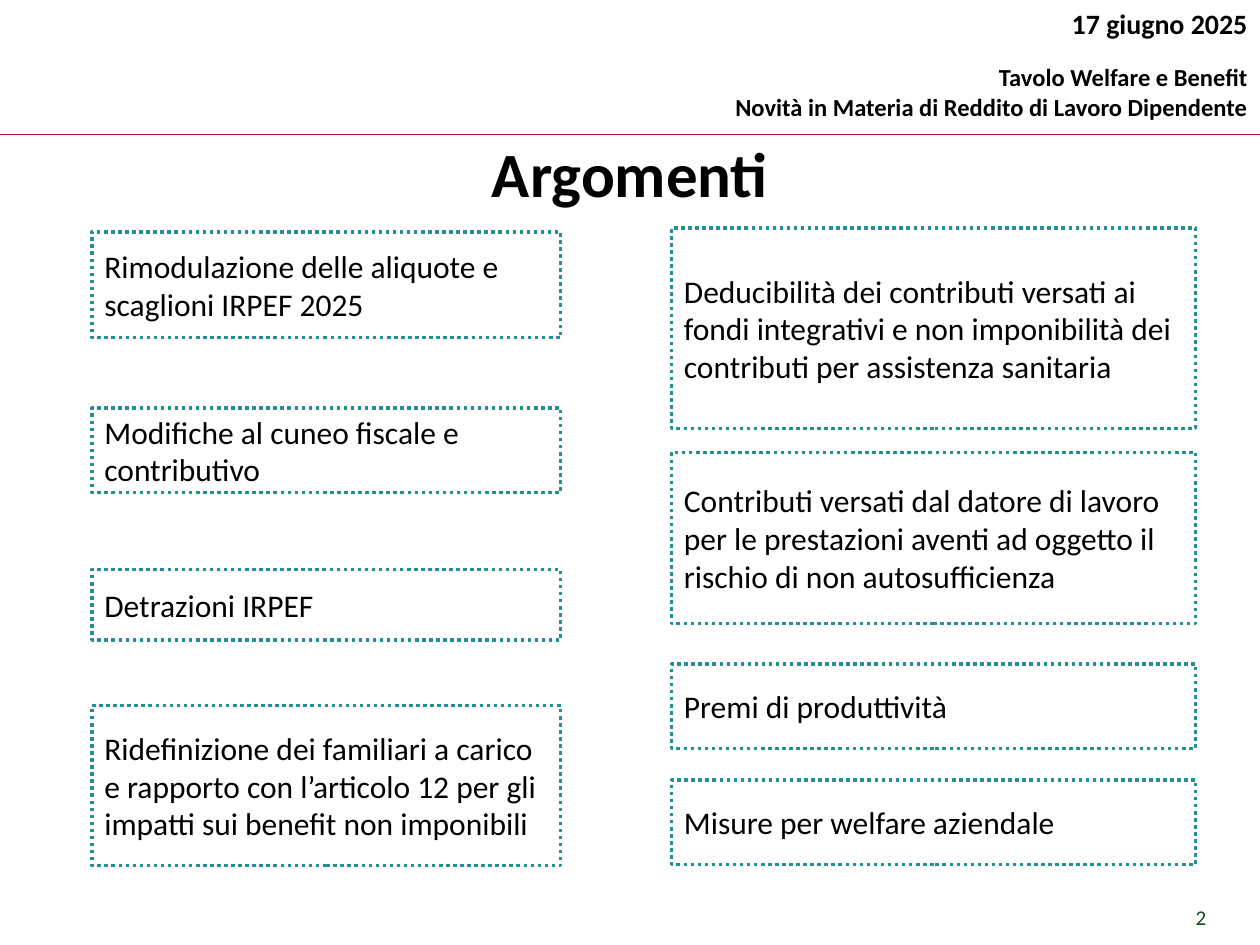
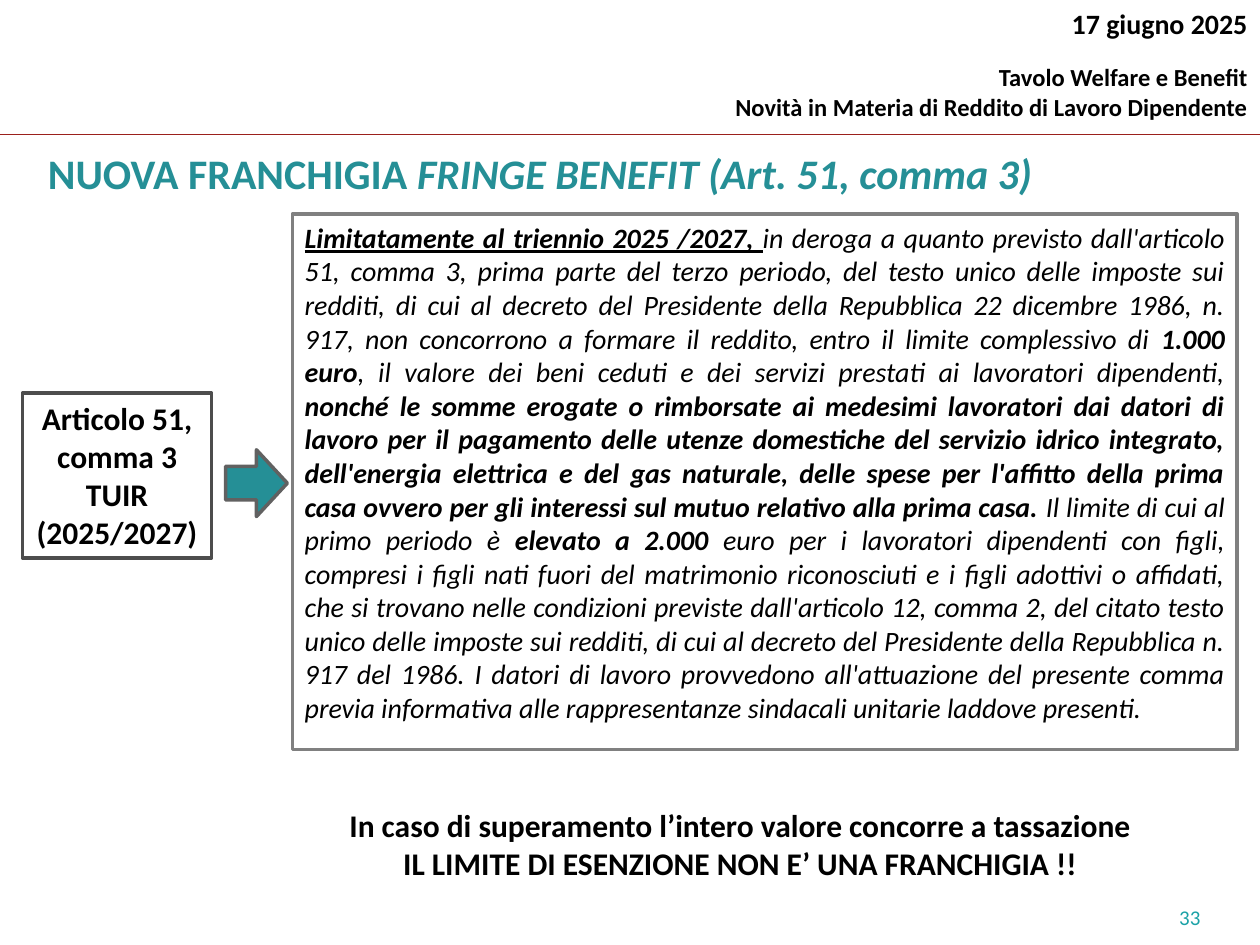
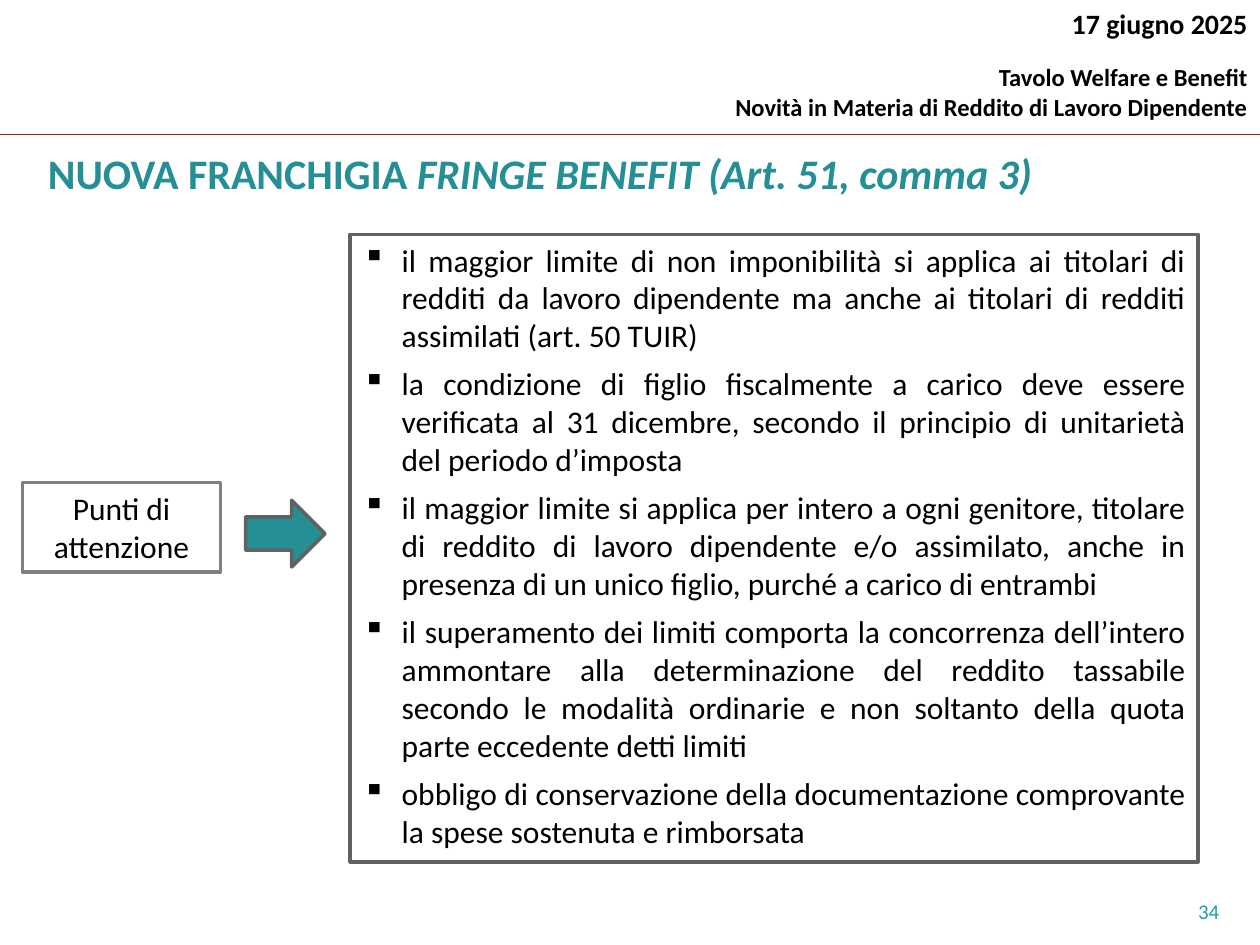
import pptx
import pptx.dml.color
import pptx.enum.dml
import pptx.enum.shapes
import pptx.enum.text
import pptx.oxml.ns
import pptx.util
from lxml import etree

ALIGN = pptx.enum.text.PP_ALIGN
ANCHOR = pptx.enum.text.MSO_ANCHOR
SHAPE = pptx.enum.shapes.MSO_SHAPE

FONT = "Calibri"
BLACK, WHITE = "000000", "FFFFFF"
TEAL, RED, GREEN, NUMBER_TEAL = "258F96", "9B201C", "0F4B0F", "1BA2A7"
DARK_GRAY, MID_GRAY, LIGHT_GRAY = "4D4D4D", "616161", "808080"

WIDTH, HEIGHT = pptx.util.Inches(10), pptx.util.Inches(7.5)
COLUMN, ROW = WIDTH / 100, HEIGHT / 75
INDENT = pptx.util.Inches(0.31)

TOPIC_COLUMNS = [
    (7.3, 37.2, [
        (18.4, 8.4, "Rimodulazione delle aliquote e scaglioni IRPEF 2025"),
        (32.4, 6.7, "Modifiche al cuneo fiscale e contributivo"),
        (45.2, 5.6, "Detrazioni IRPEF"),
        (56, 12.7, "Ridefinizione dei familiari a carico e rapporto con l’articolo 12 "
                   "per gli impatti sui benefit non imponibili"),
    ]),
    (53.3, 41.6, [
        (18.1, 15.9, "Deducibilità dei contributi versati ai fondi integrativi e non "
                     "imponibilità dei contributi per assistenza sanitaria"),
        (35.9, 13.6, "Contributi versati dal datore di lavoro per le prestazioni aventi "
                     "ad oggetto il rischio di non autosufficienza"),
        (52.7, 6.7, "Premi di produttività"),
        (61.9, 6.7, "Misure per welfare aziendale"),
    ]),
]

FRINGE_TITLE = [("NUOVA FRANCHIGIA ", "b"), ("FRINGE BENEFIT (Art. 51, comma 3)", "bi")]

LAW_TEXT = [
    ("Limitatamente al triennio 2025 /2027, ", "biu"),
    ("in deroga a quanto previsto dall'articolo 51, comma 3, prima parte del terzo periodo, "
     "del testo unico delle imposte sui redditi, di cui al decreto del Presidente della "
     "Repubblica 22 dicembre 1986, n. 917, non concorrono a formare il reddito, entro il "
     "limite complessivo di ", "i"),
    ("1.000 euro", "bi"),
    (", il valore dei beni ceduti e dei servizi prestati ai lavoratori dipendenti, ", "i"),
    ("nonché le somme erogate o rimborsate ai medesimi lavoratori dai datori di lavoro per "
     "il pagamento delle utenze domestiche del servizio idrico integrato, dell'energia "
     "elettrica e del gas naturale, delle spese per l'affitto della prima casa ovvero per "
     "gli interessi sul mutuo relativo alla prima casa. ", "bi"),
    ("Il limite di cui al primo periodo è ", "i"),
    ("elevato a 2.000 ", "bi"),
    ("euro per i lavoratori dipendenti con figli, compresi i figli nati fuori del matrimonio "
     "riconosciuti e i figli adottivi o affidati, che si trovano nelle condizioni previste "
     "dall'articolo 12, comma 2, del citato testo unico delle imposte sui redditi, di cui al "
     "decreto del Presidente della Repubblica n. 917 del 1986. I datori di lavoro provvedono "
     "all'attuazione del presente comma previa informativa alle rappresentanze sindacali "
     "unitarie laddove presenti.", "i"),
]

ATTENTION_POINTS = [
    "il maggior limite di non imponibilità si applica ai titolari di redditi da lavoro "
    "dipendente ma anche ai titolari di redditi assimilati (art. 50 TUIR)",
    "la condizione di figlio fiscalmente a carico deve essere verificata al 31 dicembre, "
    "secondo il principio di unitarietà del periodo d’imposta",
    "il maggior limite si applica per intero a ogni genitore, titolare di reddito di lavoro "
    "dipendente e/o assimilato, anche in presenza di un unico figlio, purché a carico di entrambi",
    "il superamento dei limiti comporta la concorrenza dell’intero ammontare alla determinazione "
    "del reddito tassabile secondo le modalità ordinarie e non soltanto della quota parte "
    "eccedente detti limiti",
    "obbligo di conservazione della documentazione comprovante la spese sostenuta e rimborsata",
]


def color(value):
    return pptx.dml.color.RGBColor.from_string(value)


def cells(left, top, width, height):
    return [round(length) for length in (left * COLUMN, top * ROW, width * COLUMN, height * ROW)]


def add_bullet(paragraph):
    properties = paragraph._p.get_or_add_pPr()
    properties.set("marL", str(INDENT))
    properties.set("indent", str(-INDENT))
    bullet = etree.SubElement(properties, pptx.oxml.ns.qn("a:buChar"))
    bullet.set("char", "▪")


def write(shape, paragraphs, size, ink=BLACK, bold=False, align=ALIGN.LEFT,
          anchor=ANCHOR.TOP, bullets=False):
    frame = shape.text_frame
    frame.word_wrap = True
    frame.auto_size = pptx.enum.text.MSO_AUTO_SIZE.NONE
    frame.vertical_anchor = anchor
    for index, content in enumerate(paragraphs):
        paragraph = frame.add_paragraph() if index else frame.paragraphs[0]
        paragraph.alignment = align
        if bullets:
            add_bullet(paragraph)
            paragraph.space_after = pptx.util.Pt(6)
        font = paragraph.font
        font.name, font.size, font.bold = FONT, pptx.util.Pt(size), bold
        font.color.rgb = color(ink)
        if isinstance(content, str):
            paragraph.add_run().text = content
        else:
            add_styled_runs(paragraph, content)
    return frame.paragraphs


def add_styled_runs(paragraph, pieces):
    for text, style in pieces:
        run = paragraph.add_run()
        run.text = text
        run.font.bold = "b" in style
        run.font.italic = "i" in style
        run.font.underline = "u" in style


def add_figure(slide, kind, area, fill, outline=None, dotted=False):
    shape = slide.shapes.add_shape(kind, *cells(*area))
    shape.shadow.inherit = False
    shape.fill.solid()
    shape.fill.fore_color.rgb = color(fill)
    if outline is None:
        shape.line.fill.background()
        return shape
    shape.line.color.rgb = color(outline)
    shape.line.width = pptx.util.Pt(2)
    if dotted:
        shape.line.dash_style = pptx.enum.dml.MSO_LINE.ROUND_DOT
    return shape


def add_box(slide, area, paragraphs, outline=None, dotted=False, size=18, **text_style):
    box = add_figure(slide, SHAPE.RECTANGLE, area, WHITE, outline, dotted)
    write(box, paragraphs, size, **text_style)


def add_arrow(slide, area):
    add_figure(slide, SHAPE.RIGHT_ARROW, area, TEAL, MID_GRAY)


def add_page_number(slide, left, top, number, ink=NUMBER_TEAL):
    box = slide.shapes.add_textbox(*cells(left, top, 5.9, 2.9))
    write(box, [number], 12, ink)


def set_title(slide, area, content, size, **text_style):
    title = slide.shapes.title
    title.left, title.top, title.width, title.height = cells(*area)
    return write(title, [content], size, bold=True, **text_style)[0]


def set_fringe_title(slide):
    paragraph = set_title(slide, (2.8, 11.5, 86.6, 4.5), FRINGE_TITLE, 24, ink=TEAL)
    paragraph.line_spacing = pptx.util.Pt(26.6)


def move_header_to_layout(slide):
    header = slide.shapes.add_textbox(*cells(54.2, 0, 45.8, 10.2))
    lines = write(header, ["17 giugno 2025", "Tavolo Welfare e Benefit",
                           "Novità in Materia di Reddito di Lavoro Dipendente"],
                  14, bold=True, align=ALIGN.RIGHT)
    lines[0].font.size = pptx.util.Pt(16)
    lines[1].space_before = pptx.util.Pt(12.8)

    rule = slide.shapes.add_connector(pptx.enum.shapes.MSO_CONNECTOR.STRAIGHT,
                                      *cells(0, 10.7, 100, 10.7))
    rule.line.color.rgb = color(RED)
    rule.line.width = pptx.util.Pt(0.75)
    etree.SubElement(rule.element.spPr, pptx.oxml.ns.qn("a:effectLst"))
    for shape in (header, rule):
        slide.slide_layout.shapes.element.append(shape.element)


def build_topics(slide):
    set_title(slide, (6.3, 10.2, 87.4, 7.1), "Argomenti", 36, align=ALIGN.CENTER)
    for left, width, topics in TOPIC_COLUMNS:
        for top, height, topic in topics:
            add_box(slide, (left, top, width, height), [topic], TEAL, dotted=True,
                    anchor=ANCHOR.MIDDLE)
    add_page_number(slide, 93.9, 71.3, "2", GREEN)


def build_law(slide):
    set_fringe_title(slide)
    add_box(slide, (23.2, 17, 75, 42.5), [LAW_TEXT], LIGHT_GRAY, size=16, align=ALIGN.JUSTIFY)
    add_box(slide, (1.8, 31.2, 15, 13.1), ["Articolo 51, comma 3 TUIR", "(2025/2027)"],
            DARK_GRAY, bold=True, align=ALIGN.CENTER)
    add_arrow(slide, (17.9, 35.7, 4.9, 5.3))
    add_box(slide, (19, 63.5, 79.5, 7.1),
            ["In caso di superamento l’intero valore concorre a tassazione",
             "IL LIMITE DI ESENZIONE NON E’ UNA FRANCHIGIA !!"],
            bold=True, align=ALIGN.CENTER)
    add_page_number(slide, 92.6, 71.3, "33")


def build_attention(slide):
    set_fringe_title(slide)
    add_box(slide, (27.8, 18.6, 67.3, 49.8), ATTENTION_POINTS, MID_GRAY,
            align=ALIGN.JUSTIFY, bullets=True)
    add_box(slide, (1.8, 38.3, 15.7, 7.1), ["Punti di attenzione"], LIGHT_GRAY,
            align=ALIGN.CENTER)
    add_arrow(slide, (19.5, 39.7, 6.3, 5.3))
    add_page_number(slide, 94.1, 70.8, "34")


def main():
    presentation = pptx.Presentation()
    presentation.slide_width, presentation.slide_height = WIDTH, HEIGHT
    title_only = presentation.slide_layouts[5]
    builders = [build_topics, build_law, build_attention]
    slides = [presentation.slides.add_slide(title_only) for _ in builders]
    move_header_to_layout(slides[0])
    for build, slide in zip(builders, slides):
        build(slide)
    presentation.save("out.pptx")


if __name__ == "__main__":
    main()
